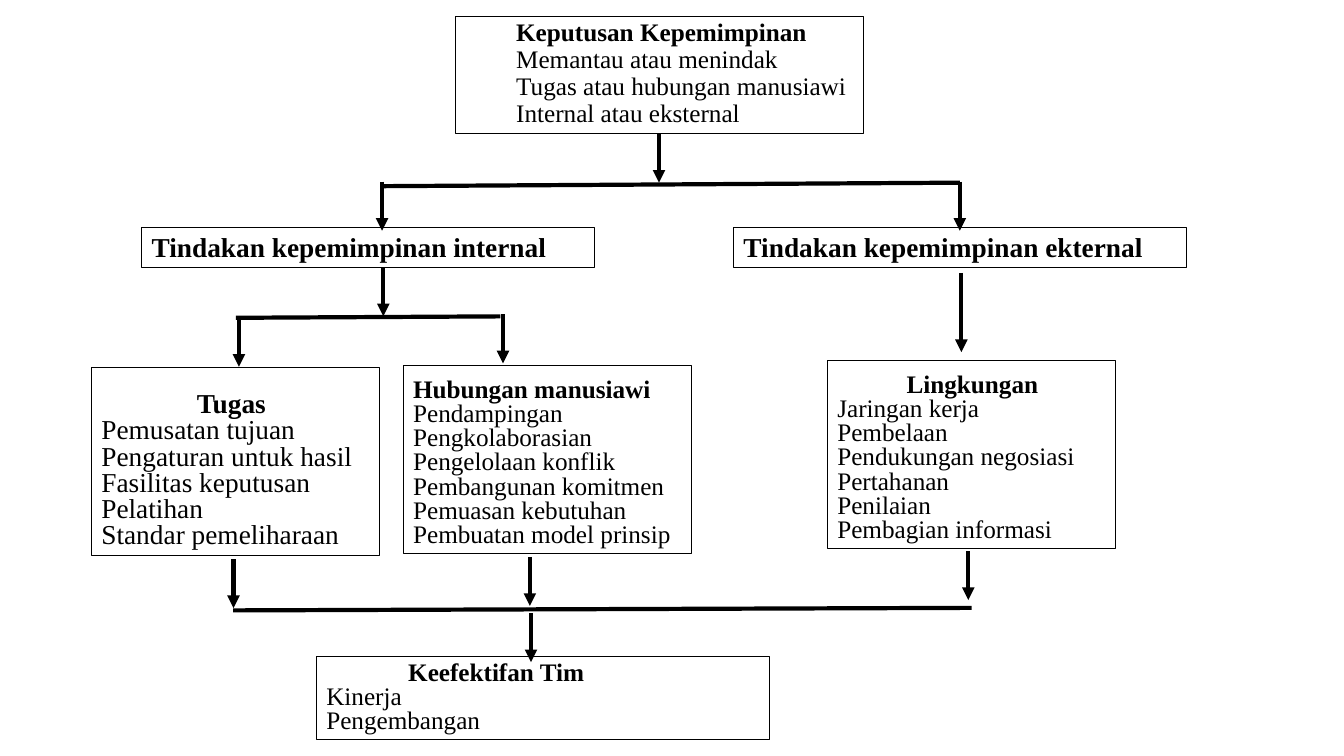
from dataclasses import dataclass

from lxml.etree import SubElement
from pptx import Presentation
from pptx.dml.color import RGBColor
from pptx.enum.shapes import MSO_CONNECTOR, MSO_SHAPE
from pptx.enum.text import MSO_ANCHOR, MSO_AUTO_SIZE, PP_ALIGN
from pptx.oxml.ns import qn
from pptx.shapes.autoshape import Shape
from pptx.slide import Slide
from pptx.util import Pt

BLACK = RGBColor(0, 0, 0)
WHITE = RGBColor(255, 255, 255)
FONT = "Times New Roman"
DROP = 35


@dataclass
class Box:
    left: float
    top: float
    width: float
    height: float
    head: str
    items: tuple[str, ...] = ()
    size: float = 18
    indent: float = 0
    pitch: float = 0.8


@dataclass
class Bar:
    left: float
    start: float
    right: float
    end: float


@dataclass
class Arrow:
    x: float
    top: float
    length: float = DROP


TITLE = Box(325.5, 11.7, 291, 83.6, "Keputusan Kepemimpinan",
            ("Memantau atau menindak", "Tugas atau hubungan manusiawi",
             "Internal atau eksternal"), indent=36, pitch=0.9)

BOXES = [
    Box(101.2, 162.5, 323.6, 28.6, "Tindakan kepemimpinan internal", size=19.5),
    Box(524, 162.5, 323.6, 28.6, "Tindakan kepemimpinan ekternal", size=19.5),
    Box(65.3, 262.5, 206, 134, "Tugas",
        ("Pemusatan tujuan", "Pengaturan untuk hasil", "Fasilitas keputusan",
         "Pelatihan", "Standar pemeliharaan"), size=19.5, indent=68.25),
    Box(288, 261.2, 206, 134, "Hubungan manusiawi",
        ("Pendampingan", "Pengkolaborasian", "Pengelolaan konflik",
         "Pembangunan komitmen", "Pemuasan kebutuhan",
         "Pembuatan model prinsip")),
    Box(591, 257.6, 206, 134, "Lingkungan",
        ("Jaringan kerja", "Pembelaan", "Pendukungan negosiasi", "Pertahanan",
         "Penilaian", "Pembagian informasi"), indent=49.5),
    Box(226, 469, 323.6, 59.4, "Keefektifan Tim",
        ("Kinerja", "Pengembangan"), indent=58.5),
]

BARS = [
    Bar(274, 133, 685.6, 130.5),
    Bar(168.5, 227, 357.5, 226),
    Bar(166.5, 436, 694, 434.2),
]

ARROWS = [
    Arrow(470.7, 95.5), Arrow(272.9, 129.8), Arrow(685.6, 129.8),
    Arrow(273.8, 191), Arrow(170.7, 227), Arrow(359.3, 224.5),
    Arrow(686.7, 195, 56.5), Arrow(166.8, 399.3), Arrow(378.5, 397.8),
    Arrow(691.7, 393.6), Arrow(379.3, 438),
]


def fill_box(shape: Shape, box: Box) -> None:
    """Place a shape and give it its frame and text."""
    shape.left, shape.top = Pt(box.left), Pt(box.top)
    shape.width, shape.height = Pt(box.width), Pt(box.height)
    shape.fill.solid()
    shape.fill.fore_color.rgb = WHITE
    shape.line.color.rgb = BLACK
    shape.line.width = Pt(0.75)

    frame = shape.text_frame
    frame.text = "\n".join((box.head, *box.items))
    frame.word_wrap = True
    frame.auto_size = MSO_AUTO_SIZE.NONE
    frame.vertical_anchor = MSO_ANCHOR.BOTTOM
    for rank, para in enumerate(frame.paragraphs):
        para.alignment = PP_ALIGN.LEFT
        para.line_spacing = box.pitch
        para.space_before = para.space_after = Pt(0)
        font = para.runs[0].font
        font.name = FONT
        font.size = Pt(box.size)
        font.bold = rank == 0
        font.color.rgb = BLACK
    if box.indent:
        props = frame.paragraphs[0]._p.get_or_add_pPr()
        props.set("marL", str(Pt(box.indent)))
        props.set("indent", "0")


def add_box(slide: Slide, box: Box) -> None:
    shape = slide.shapes.add_shape(MSO_SHAPE.RECTANGLE, 0, 0, 0, 0)
    shape.shadow.inherit = False
    fill_box(shape, box)


def add_line(slide: Slide, bar: Bar, tip: bool = False) -> None:
    line = slide.shapes.add_connector(
        MSO_CONNECTOR.STRAIGHT,
        Pt(bar.left), Pt(bar.start), Pt(bar.right), Pt(bar.end))
    line.line.color.rgb = BLACK
    line.line.width = Pt(3)
    if tip:
        SubElement(line.line._get_or_add_ln(), qn("a:tailEnd"), type="triangle")
    SubElement(line._element.spPr, qn("a:effectLst"))


def main() -> None:
    deck = Presentation()
    deck.slide_width, deck.slide_height = Pt(960), Pt(540)
    slide = deck.slides.add_slide(deck.slide_layouts[5])
    fill_box(slide.shapes.title, TITLE)
    for box in BOXES:
        add_box(slide, box)
    for bar in BARS:
        add_line(slide, bar)
    for arrow in ARROWS:
        end = arrow.top + arrow.length
        add_line(slide, Bar(arrow.x, arrow.top, arrow.x, end), tip=True)
    deck.save("out.pptx")


if __name__ == "__main__":
    main()
